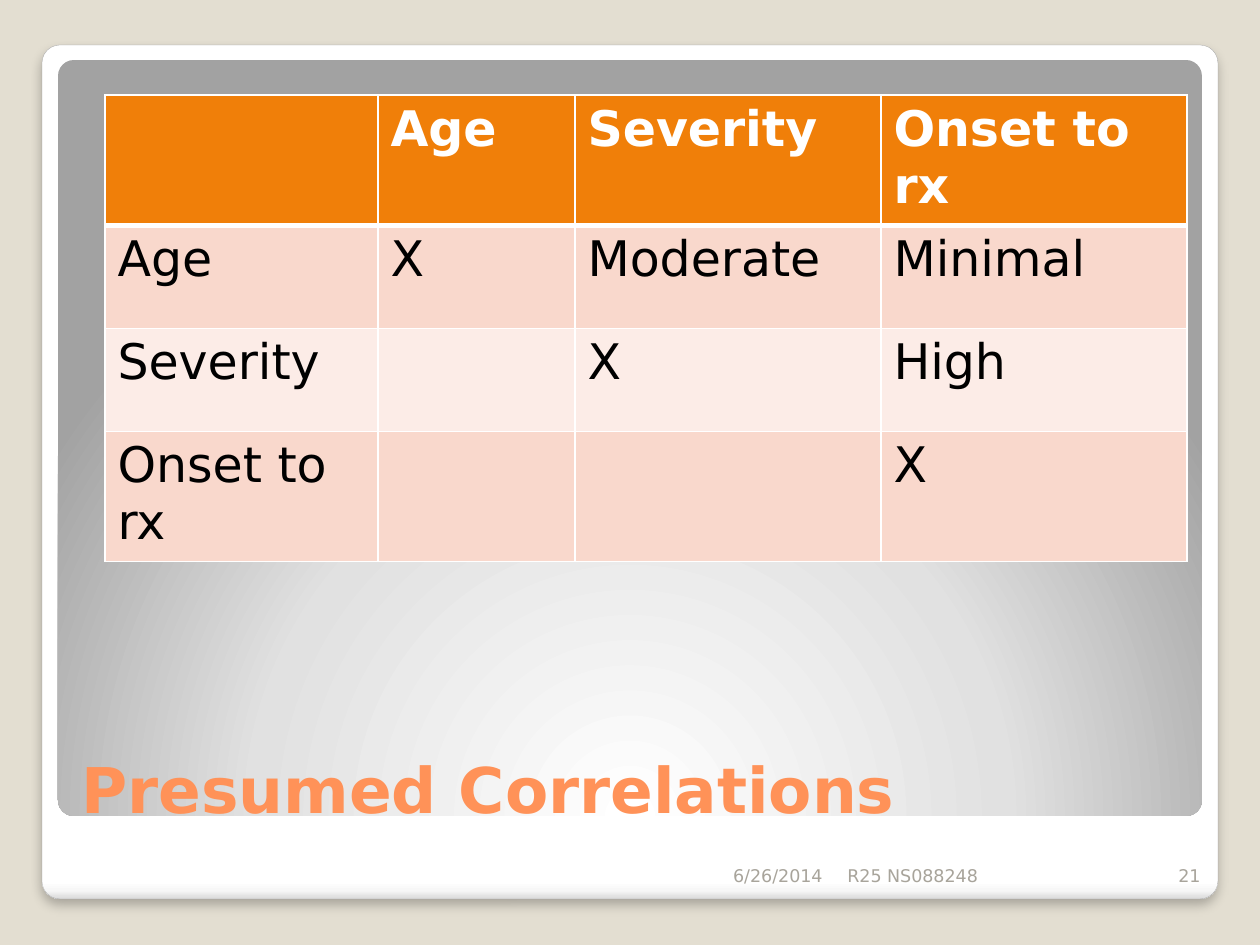
from lxml import etree
from pptx import Presentation
from pptx import util as u
from pptx.dml.color import RGBColor
from pptx.enum import shapes, text
from pptx.oxml import parse_xml
from pptx.oxml.ns import nsdecls, qn

PX = 914400 // 126
FONT = "DejaVu Sans"
rgb = RGBColor.from_string


def write(frame, words, size=10, color="A8A49B", bold=False, align=text.PP_ALIGN.LEFT):
    frame.word_wrap = True
    para = frame.paragraphs[0]
    para.alignment = align
    span = para.add_run()
    span.text = words
    span.font.name = FONT
    span.font.size = u.Pt(size)
    span.font.bold = bold
    span.font.color.rgb = rgb(color)


def add_panel(left, top, width, height, stops, direction):
    """Add a rounded panel with a gradient; direction is the a:lin or a:path element."""
    panel = page.shapes.add_shape(shapes.MSO_SHAPE.ROUNDED_RECTANGLE,
                                  left * PX, top * PX, width * PX, height * PX)
    panel.adjustments[0] = 0.021
    panel.shadow.inherit = False
    panel.line.fill.background()
    stop_xml = "".join(f'<a:gs pos="{pos * 1000}"><a:srgbClr val="{color}"/></a:gs>'
                       for pos, color in stops)
    gradient = parse_xml(f'<a:gradFill {nsdecls("a")} rotWithShape="1">'
                         f'<a:gsLst>{stop_xml}</a:gsLst>{direction}</a:gradFill>')
    panel._element.spPr.find(qn("a:prstGeom")).addnext(gradient)
    return panel


deck = Presentation()
deck.slide_width, deck.slide_height = 1260 * PX, 945 * PX
page = deck.slides.add_slide(deck.slide_layouts[6])
page.background.fill.solid()
page.background.fill.fore_color.rgb = rgb("E3DED1")

# Card and the shaded panel on it
card = add_panel(42, 45, 1176, 854,
                 [(0, "FFFFFF"), (98, "FFFFFF"), (99, "F7F7F7"), (100, "DADADA")],
                 '<a:lin ang="5400000" scaled="0"/>')
card.line.color.rgb = rgb("A4A4A4")
card.line.width = u.Pt(0.16)
card._element.spPr.find(qn("a:effectLst")).append(parse_xml(
    f'<a:outerShdw {nsdecls("a")} blurRad="{u.Pt(6)}" dist="{u.Pt(4)}" dir="5400000" '
    'algn="t" rotWithShape="0"><a:srgbClr val="000000"><a:alpha val="25000"/>'
    '</a:srgbClr></a:outerShdw>'))
add_panel(58, 60, 1144, 756, [(0, "FFFFFF"), (55, "E1E1E1"), (100, "A2A2A2")],
          '<a:path path="circle"><a:fillToRect l="50000" t="175000" r="50000" b="-75000"/></a:path>')

# Title and footer
right = text.PP_ALIGN.RIGHT
for words, left, top, width, height, style in [
    ("Presumed Correlations", 69, 687, 1128, 145, dict(size=36, color="FF9258", bold=True)),
    ("6/26/2014", 520, 842, 315, 50, dict(align=right)),
    ("R25 NS088248", 835, 842, 315, 50, {}),
    ("21", 1150, 842, 63, 50, dict(align=right)),
]:
    box = page.shapes.add_textbox(left * PX, top * PX, width * PX, height * PX)
    box.text_frame.vertical_anchor = text.MSO_ANCHOR.BOTTOM
    write(box.text_frame, words, **style)

# Correlation table
rows = [
    ["", "Age", "Severity", "Onset to rx"],
    ["Age", "X", "Moderate", "Minimal"],
    ["Severity", "", "X", "High"],
    ["Onset to rx", "", "", "X"],
]
row_fills = ["F07F09", "F9D8CC", "FCECE7", "F9D8CC"]
col_widths = [273, 197, 306, 306]
row_height = 103
table = page.shapes.add_table(len(rows), len(col_widths), 105 * PX, 95 * PX,
                              sum(col_widths) * PX, len(rows) * row_height * PX).table
for column, width in zip(table.columns, col_widths):
    column.width = width * PX
for r, row in enumerate(rows):
    table.rows[r].height = row_height * PX
    header = r == 0
    for c, words in enumerate(row):
        cell = table.cell(r, c)
        cell.fill.solid()
        cell.fill.fore_color.rgb = rgb(row_fills[r])
        if words:
            write(cell.text_frame, words, size=28, bold=header,
                  color="FFFFFF" if header else "000000")
        cell_props = cell._tc.get_or_add_tcPr()
        for i, side in enumerate("LRTB"):
            heavy = (header and side == "B") or (r == 1 and side == "T")
            border = etree.Element(qn(f"a:ln{side}"), w=str(u.Pt(3 if heavy else 1)))
            fill = etree.SubElement(border, qn("a:solidFill"))
            etree.SubElement(fill, qn("a:srgbClr"), val="FFFFFF")
            cell_props.insert(i, border)

deck.save("out.pptx")
